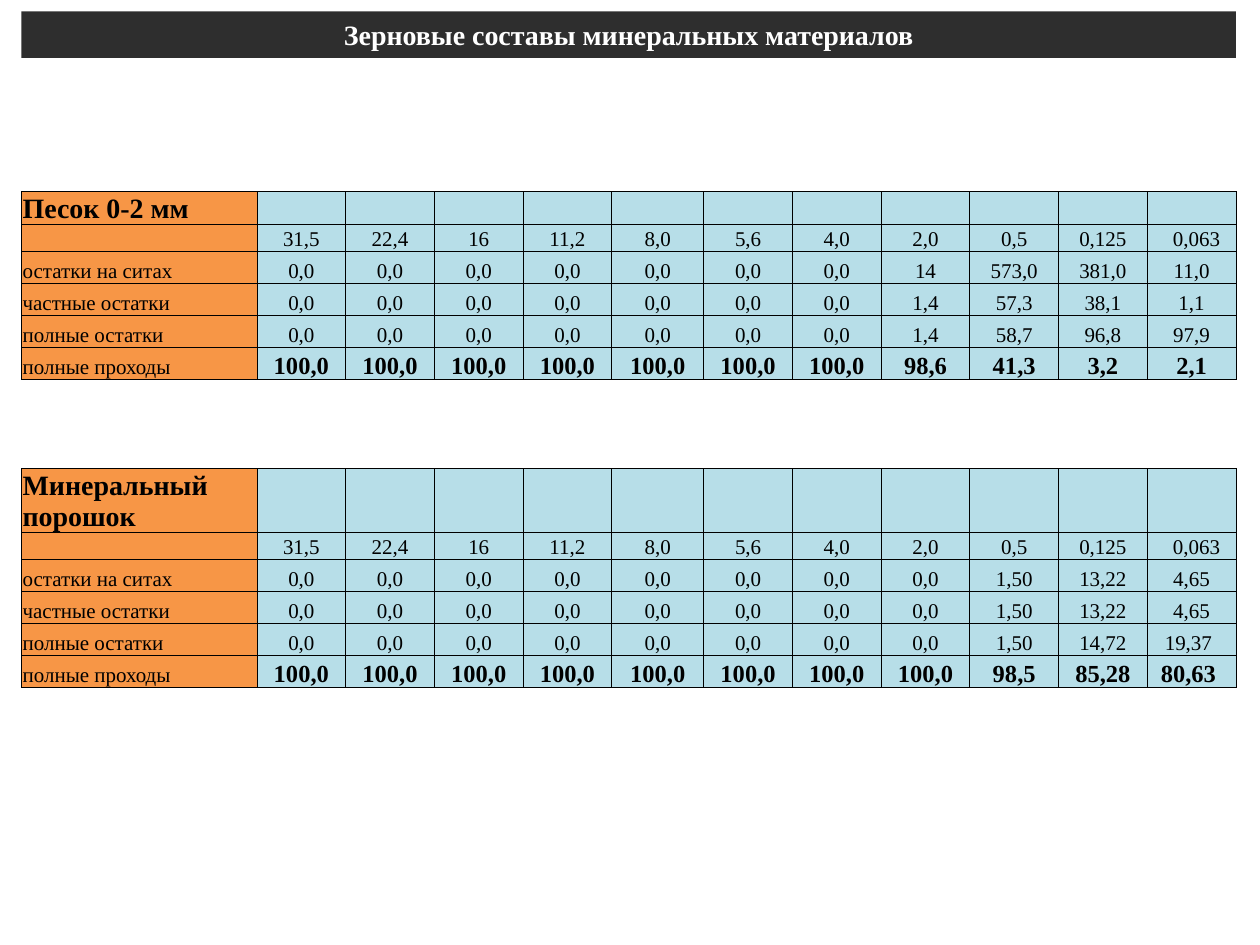
import lxml.etree
import pptx
import pptx.dml.color
import pptx.enum.shapes
import pptx.enum.text
import pptx.oxml.ns
import pptx.util

Inches = pptx.util.Inches
Pt = pptx.util.Pt
qn = pptx.oxml.ns.qn
ALIGN = pptx.enum.text.PP_ALIGN
ANCHOR = pptx.enum.text.MSO_ANCHOR

LEFT, WIDTH = 0.17, 9.64
LABEL_WIDTH, WIDE_WIDTH, WIDE_COLUMN = 1.87, 0.73, 5
SIEVES = ["31,5", "22,4", "16", "11,2", "8,0", "5,6", "4,0", "2,0", "0,5", "0,125", "0,063"]
ROW_LABELS = ["остатки на ситах", "частные остатки", "полные остатки", "полные проходы"]
SAND = [
    ["0,0"] * 7 + ["14", "573,0", "381,0", "11,0"],
    ["0,0"] * 7 + ["1,4", "57,3", "38,1", "1,1"],
    ["0,0"] * 7 + ["1,4", "58,7", "96,8", "97,9"],
    ["100,0"] * 7 + ["98,6", "41,3", "3,2", "2,1"],
]
POWDER = [
    ["0,0"] * 8 + ["1,50", "13,22", "4,65"],
    ["0,0"] * 8 + ["1,50", "13,22", "4,65"],
    ["0,0"] * 8 + ["1,50", "14,72", "19,37"],
    ["100,0"] * 8 + ["98,5", "85,28", "80,63"],
]


def color(value):
    return pptx.dml.color.RGBColor.from_string(value)


class SlideBuilder:
    font = "Times New Roman"
    ink = "000000"
    label_fill = "F79646"
    value_fill = "B7DEE8"

    def __init__(self, slide):
        self.s = slide

    def run(self, p, text, size, bold, ink):
        r = p.add_run()
        r.text = text
        r.font.name = self.font
        r.font.size = Pt(size)
        r.font.bold = bold
        r.font.color.rgb = color(ink)

    def banner(self, text, top, height):
        sp = self.s.shapes.add_shape(
            pptx.enum.shapes.MSO_SHAPE.RECTANGLE,
            Inches(LEFT), Inches(top), Inches(WIDTH), Inches(height))
        sp.shadow.inherit = False
        sp.line.fill.background()
        sp.fill.solid()
        sp.fill.fore_color.rgb = color(self.ink)
        tint = next(sp._element.spPr.iter(qn("a:srgbClr")))
        lxml.etree.SubElement(tint, qn("a:alpha"), val="82000")
        tf = sp.text_frame
        tf.word_wrap = True
        tf.vertical_anchor = ANCHOR.MIDDLE
        p = tf.paragraphs[0]
        p.alignment = ALIGN.CENTER
        self.run(p, text, 16, True, "FFFFFF")

    def borders(self, cell):
        tc_pr = cell._tc.get_or_add_tcPr()
        for side in ("lnL", "lnR", "lnT", "lnB"):
            ln = lxml.etree.SubElement(tc_pr, qn(f"a:{side}"), w=str(Pt(0.5)))
            fill = lxml.etree.SubElement(ln, qn("a:solidFill"))
            lxml.etree.SubElement(fill, qn("a:srgbClr"), val=self.ink)

    def cell(self, cell, text, fill, size, bold, align):
        self.borders(cell)
        cell.fill.solid()
        cell.fill.fore_color.rgb = color(fill)
        cell.vertical_anchor = ANCHOR.BOTTOM
        cell.margin_left = cell.margin_right = cell.margin_top = Inches(0.01)
        cell.margin_bottom = 0
        p = cell.text_frame.paragraphs[0]
        p.alignment = align
        if text:
            self.run(p, text, size, bold, self.ink)
        else:
            lxml.etree.SubElement(p._p, qn("a:endParaRPr"), sz=str(size * 100))

    def sieve_table(self, title, values, top, title_height):
        rows = [[title] + [""] * len(SIEVES), [""] + SIEVES]
        rows += [[label] + row for label, row in zip(ROW_LABELS, values)]
        heights = [title_height, 0.2] + [0.255] * len(values)
        columns = len(SIEVES) + 1
        frame = self.s.shapes.add_table(
            len(rows), columns,
            Inches(LEFT), Inches(top), Inches(WIDTH), Inches(sum(heights)))
        table = frame.table
        value_width = (WIDTH - LABEL_WIDTH - WIDE_WIDTH) / (columns - 2)
        for i, column in enumerate(table.columns):
            special = {0: LABEL_WIDTH, WIDE_COLUMN: WIDE_WIDTH}
            column.width = Inches(special.get(i, value_width))
        for i, (row, height) in enumerate(zip(rows, heights)):
            table.rows[i].height = Inches(height)
            for j, text in enumerate(row):
                is_label = j == 0
                is_title = is_label and i == 0
                is_total = not is_label and i == len(rows) - 1
                self.cell(
                    table.cell(i, j), text,
                    self.label_fill if is_label else self.value_fill,
                    16 if is_title else 14 if is_total else 12,
                    is_title or is_total,
                    ALIGN.LEFT if is_label else ALIGN.CENTER)
        table.cell(1, columns - 1).margin_left = Inches(0.09)
        return table


def main():
    prs = pptx.Presentation()
    prs.slide_width, prs.slide_height = Inches(10), Inches(7.5)
    builder = SlideBuilder(prs.slides.add_slide(prs.slide_layouts[6]))
    builder.sieve_table("Песок 0-2 мм", SAND, 1.52, 0.26)
    powder = builder.sieve_table("Минеральный порошок", POWDER, 3.72, 0.5)
    for i in (4, 5):
        powder.cell(i, len(SIEVES)).margin_right = Inches(0.06)
    builder.banner("Зерновые составы минеральных материалов", 0.09, 0.37)
    prs.save("out.pptx")


if __name__ == "__main__":
    main()
